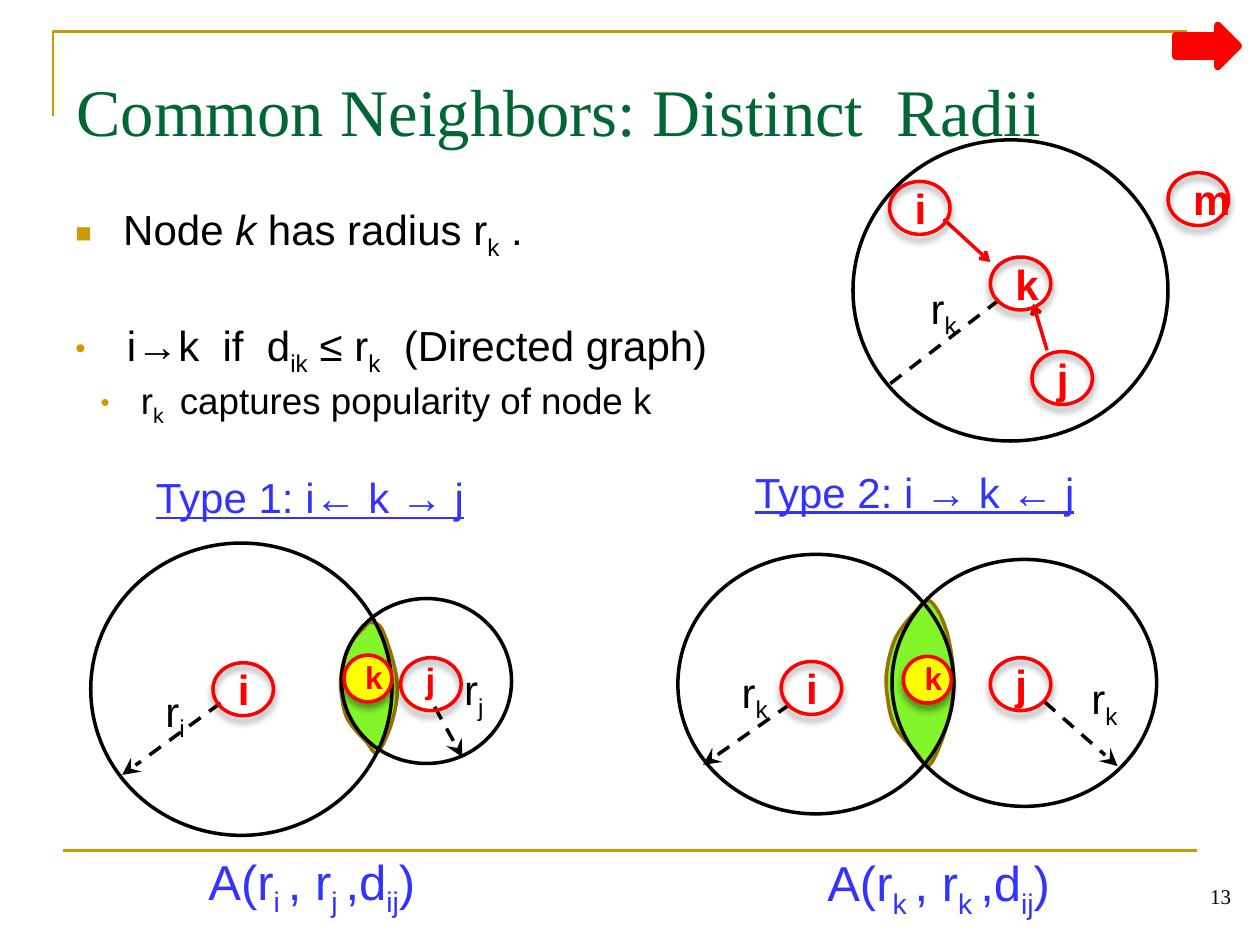
from lxml.etree import SubElement
from pptx import Presentation
from pptx.dml.color import RGBColor
from pptx.enum.dml import MSO_LINE
from pptx.enum.shapes import MSO_CONNECTOR, MSO_SHAPE
from pptx.enum.text import MSO_ANCHOR, PP_ALIGN
from pptx.oxml import parse_xml
from pptx.oxml.ns import nsdecls, qn
from pptx.util import Inches, Pt

GOLD = RGBColor(0xCC, 0x99, 0x00)
GREEN = RGBColor(0x00, 0x66, 0x33)
BLUE = RGBColor(0x33, 0x33, 0xFF)
RED = RGBColor(0xFF, 0x00, 0x00)
BLACK = RGBColor(0x00, 0x00, 0x00)
YELLOW = RGBColor(0xFF, 0xFF, 0x00)
LIME = RGBColor(0x82, 0xF5, 0x2B)
BROWN = RGBColor(0x97, 0x71, 0x00)

SERIF = {"name": "Times New Roman"}
SANS = {"name": "Arial", "size": Pt(24)}
HEADING = {**SANS, "underline": True}
AREA = {**SANS, "size": Pt(28)}

TITLE = "Common Neighbors: Distinct  Radii"
BODY = [
    ("Node *k* has radius r|k| .", 24, 0, 0.38, 0.38, "■", 65),
    ("i→k  if  d|ik| ≤ r|k|  (Directed graph)", 24, 33.5, 0.41, 0.41, "•", 70),
    ("r|k | captures popularity of node k", 21, 0, 0.52, 0.32, "•", 70),
]
LABELS = [
    ("Type 2: i → k ← j", 5.76, 3.65, 3, 0.5, HEADING, BLUE),
    ("Type 1: i← k → j", 1.07, 3.69, 2.78, 0.5, HEADING, BLUE),
    ("A(r|k |, r|k |,d|ij|)", 5.65, 6.72, 3.6, 0.57, AREA, BLUE),
    ("A(r|i |, r|j |,d|ij|)", 1.35, 6.71, 2.25, 0.57, AREA, BLUE),
    ("r|k", 5.71, 5.24, 0.56, 0.5, SANS, BLACK),
    ("r|k", 8.46, 5.29, 0.61, 0.5, SANS, BLACK),
    ("r|i", 1.17, 5.39, 0.44, 0.5, SANS, BLACK),
    ("r|j", 3.54, 5.22, 0.44, 0.5, SANS, BLACK),
    ("r|k", 7.27, 2.19, 0.44, 0.5, SANS, BLACK),
]
LENSES = [
    [(7.38, 4.77), (7.26, 4.86), (7.11, 5.06), (7.04, 5.31), (7.04, 5.51), (7.1, 5.76),
     (7.27, 5.97), (7.38, 6.07), (7.52, 5.74), (7.57, 5.39), (7.51, 5)],
    [(2.95, 4.94), (2.9, 4.97), (2.77, 5.13), (2.71, 5.34), (2.71, 5.51), (2.76, 5.71),
     (2.91, 5.89), (3, 5.97), (3.12, 5.7), (3.15, 5.39), (3.04, 5.01)],
]
RANGES = [
    (7.08, 4.44, 2.1, 1.96),
    (5.38, 4.4, 2.19, 2.06),
    (2.71, 4.75, 1.35, 1.31),
    (0.72, 4.31, 2.39, 2.32),
    (6.77, 1.11, 2.5, 2.39),
]
LINES = [
    ((0.5, 6.75), (9.5, 6.75), GOLD, 1.5, None, None),
    ((6.27, 5.59), (5.58, 6.07), BLACK, 2, MSO_LINE.DASH, "stealth"),
    ((8.29, 5.57), (8.87, 6.08), BLACK, 2, MSO_LINE.DASH, "stealth"),
    ((1.75, 5.58), (0.97, 6.15), BLACK, 2, MSO_LINE.DASH, "stealth"),
    ((3.45, 5.61), (3.67, 6.01), BLACK, 2, MSO_LINE.DASH, "stealth"),
    ((7.93, 2.38), (7.02, 3.08), BLACK, 2, MSO_LINE.DASH, None),
    ((7.49, 1.74), (7.86, 2.08), RED, 2, None, "arrow"),
    ((8.31, 2.78), (8.2, 2.41), RED, 2, None, "arrow"),
]
HEAD_SIZE = {"stealth": "lg", "arrow": "med"}
NODES = [
    ("i", 6.2, 5.25, 24), ("j", 7.86, 5.22, 24), ("i", 1.69, 5.26, 24),
    ("j", 3.18, 5.22, 20), ("i", 7.06, 1.44, 24), ("k", 7.86, 2.04, 24),
    ("j", 8.19, 2.79, 24), ("m", 9.27, 1.37, 24),
]
SHARED_NODES = [("k", 7.17, 5.21, 18), ("k", 2.73, 5.2, 18)]

prs = Presentation()
prs.slide_width, prs.slide_height = Inches(10), Inches(7.5)
shapes = prs.slides.add_slide(prs.slide_layouts[6]).shapes


def style(shape, line, width, fill=None):
    shape.shadow.inherit = False
    if fill is None:
        shape.fill.background()
    else:
        shape.fill.solid()
        shape.fill.fore_color.rgb = fill
    shape.line.color.rgb = line
    shape.line.width = Pt(width)


def write(paragraph, text, fmt, color):
    for i, part in enumerate(text.split("|")):
        for j, piece in enumerate(part.split("*")):
            if not piece:
                continue
            run = paragraph.add_run()
            run.text = piece
            for key, value in fmt.items():
                setattr(run.font, key, value)
            run.font.color.rgb = color
            if j % 2:
                run.font.italic = True
            if i % 2:
                run._r.get_or_add_rPr().set("baseline", "-25000")


def text_frame(x, y, w, h, **settings):
    frame = shapes.add_textbox(*map(Inches, (x, y, w, h))).text_frame
    frame.word_wrap = True
    for key, value in settings.items():
        setattr(frame, key, value)
    return frame


def label(text, x, y, w, h, fmt, color, align=PP_ALIGN.CENTER, **settings):
    paragraph = text_frame(x, y, w, h, **settings).paragraphs[0]
    paragraph.alignment = align
    write(paragraph, text, fmt, color)


def ellipse(x, y, w, h, color, fill=None):
    oval = shapes.add_shape(MSO_SHAPE.OVAL, *map(Inches, (x, y, w, h)))
    style(oval, color, 2, fill)
    return oval


def outline(points, close):
    first, *rest = [(Inches(x), Inches(y)) for x, y in points]
    builder = shapes.build_freeform(*first)
    builder.add_line_segments(rest, close=close)
    return builder.convert_to_shape()


def smooth_loop(points):
    shape = outline(points, True)
    track = next(shape._element.iter(qn("a:path")))
    for segment in list(track)[1:]:
        track.remove(segment)
    left, top = (min(axis) for axis in zip(*points))
    local = [(x - left, y - top) for x, y in points]
    count = len(local)
    for i in range(count):
        before, start, end, after = (local[(i + d) % count] for d in (-1, 0, 1, 2))
        leave = [s + (e - b) / 6 for b, s, e in zip(before, start, end)]
        arrive = [e - (a - s) / 6 for s, e, a in zip(start, end, after)]
        curve = SubElement(track, qn("a:cubicBezTo"))
        for x, y in (leave, arrive, end):
            SubElement(curve, qn("a:pt"), x=str(Inches(x)), y=str(Inches(y)))
    SubElement(track, qn("a:close"))
    return shape


def node(name, x, y, size, w, h, inset, rise, label_h, fill=None):
    oval = ellipse(x, y, w, h, RED, fill)
    effects = oval._element.spPr.find(qn("a:effectLst"))
    effects.append(parse_xml(
        f'<a:outerShdw {nsdecls("a")} blurRad="{Pt(4)}" dist="{Pt(3)}" dir="5400000" '
        'rotWithShape="0"><a:srgbClr val="000000"><a:alpha val="40000"/></a:srgbClr>'
        '</a:outerShdw>'))
    fmt = {**SANS, "size": Pt(size), "bold": True}
    label(name, x + inset, y - rise, round(w * 0.52, 2), label_h, fmt, RED)


def bullet(paragraph, margin, hang, mark, percent):
    pPr = paragraph._p.get_or_add_pPr()
    pPr.set("marL", str(Inches(margin)))
    pPr.set("indent", str(-Inches(hang)))
    SubElement(SubElement(pPr, qn("a:buClr")), qn("a:srgbClr"), val=str(GOLD))
    SubElement(pPr, qn("a:buSzPct"), val=str(percent * 1000))
    SubElement(pPr, qn("a:buFont"), typeface="Arial")
    SubElement(pPr, qn("a:buChar"), char=mark)


style(outline([(0.42, 0.92), (0.42, 0.25), (9.42, 0.25)], False), GOLD, 1.5)
label(TITLE, 0.51, 0.51, 9, 1, {**SERIF, "size": Pt(38)}, GREEN, PP_ALIGN.LEFT)

body = text_frame(0.5, 1.57, 9, 2.36)
for i, (text, size, gap, margin, hang, mark, percent) in enumerate(BODY):
    paragraph = body.add_paragraph() if i else body.paragraphs[0]
    paragraph.space_before = Pt(gap)
    bullet(paragraph, margin, hang, mark, percent)
    write(paragraph, text, {**SANS, "size": Pt(size)}, BLACK)

label("13", 9.2, 6.76, 0.67, 0.5, {**SERIF, "size": Pt(12)}, BLACK, PP_ALIGN.RIGHT,
      vertical_anchor=MSO_ANCHOR.BOTTOM)

for lens in LENSES:
    style(smooth_loop(lens), BROWN, 2, LIME)
for box in RANGES:
    ellipse(*box, BLACK)
for start, end, color, width, dash, head in LINES:
    connector = shapes.add_connector(MSO_CONNECTOR.STRAIGHT, *map(Inches, start + end))
    connector.line.color.rgb = color
    connector.line.width = Pt(width)
    if dash:
        connector.line.dash_style = dash
    if head:
        size = HEAD_SIZE[head]
        SubElement(connector.get_or_add_ln(), qn("a:tailEnd"), type=head, w=size, len=size)
    SubElement(connector._element.spPr, qn("a:effectLst"))
for item in LABELS:
    label(*item)
for item in NODES:
    node(*item, 0.48, 0.42, 0.1, 0.04, 0.5)
for item in SHARED_NODES:
    node(*item, 0.38, 0.37, 0.07, 0.03, 0.35, YELLOW)

next_arrow = shapes.add_shape(MSO_SHAPE.RIGHT_ARROW, *map(Inches, (9.33, 0.2, 0.5, 0.33)))
style(next_arrow, RED, 4, RED)
SubElement(next_arrow.get_or_add_ln(), qn("a:round"))

prs.save("out.pptx")
